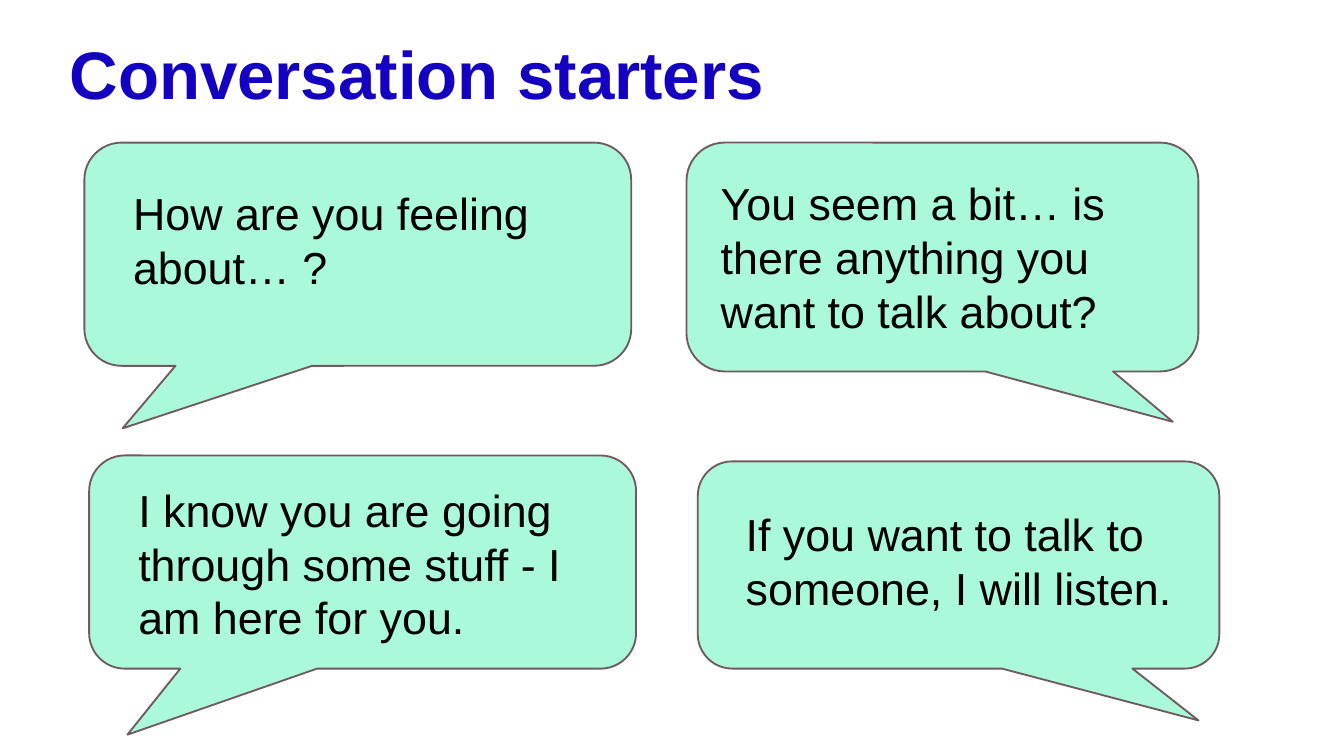
import pptx
import pptx.dml.color
import pptx.enum.shapes
import pptx.enum.text
import pptx.util

Pt = pptx.util.Pt
ANCHOR = pptx.enum.text.MSO_ANCHOR
CALLOUT = pptx.enum.shapes.MSO_SHAPE.ROUNDED_RECTANGULAR_CALLOUT

INK, MINT, EDGE, BLUE = "000000", "AAF9DB", "705A5F", "1300C1"
BODY = {"name": "Arial", "size": Pt(24), "bold": False}
HEAD = {"name": "Arial", "size": Pt(36), "bold": True}

# Bubble box, tail tip (share of width and height from the centre), text box, lines
STARTERS = [
    ((45.2, 76.4, 293, 119.6), (-0.43, 0.78), (64.2, 95.8, 252, 65.4),
     ["How are you feeling", "about… ?"]),
    ((367.8, 76.4, 274.2, 122.6), (0.45, 0.72), (379, 90.7, 251.3, 94.3),
     ["You seem a bit… is there anything you want to talk about?"]),
    ((47.8, 244, 293, 114.2), (-0.43, 0.81), (67, 255, 264, 94.3),
     ["I know you are going through some stuff - I am here for you."]),
    ((373.8, 247.2, 279.4, 111), (0.46, 0.75), (392.4, 267.8, 262.8, 65.4),
     ["If you want to talk to someone, I will listen."]),
]


def color(code):
    return pptx.dml.color.RGBColor.from_string(code)


def points(box):
    return [Pt(value) for value in box]


def bubble(slide, box, tip):
    shape = slide.shapes.add_shape(CALLOUT, *points(box))
    shape.shadow.inherit = False
    shape.adjustments[0], shape.adjustments[1] = tip
    shape.fill.solid()
    shape.fill.fore_color.rgb = color(MINT)
    shape.line.color.rgb = color(EDGE)
    shape.line.width = Pt(1)


def label(slide, box, lines, style, code, anchor=ANCHOR.TOP, pitch=1.0):
    frame = slide.shapes.add_textbox(*points(box)).text_frame
    frame.word_wrap = True
    frame.vertical_anchor = anchor
    frame.text = "\n".join(lines)
    for para in frame.paragraphs:
        para.line_spacing = pitch
        for key, value in style.items():
            setattr(para.font, key, value)
        para.font.color.rgb = color(code)


def main():
    deck = pptx.Presentation()
    deck.slide_width, deck.slide_height = Pt(720), Pt(405)
    slide = deck.slides.add_slide(deck.slide_layouts[6])
    label(slide, (30.2, -13.7, 620.6, 78.5), ["Conversation starters"],
          HEAD, BLUE, ANCHOR.BOTTOM, 0.9)
    for box, tip, area, lines in STARTERS:
        bubble(slide, box, tip)
        label(slide, area, lines, BODY, INK)
    deck.save("out.pptx")


if __name__ == "__main__":
    main()
